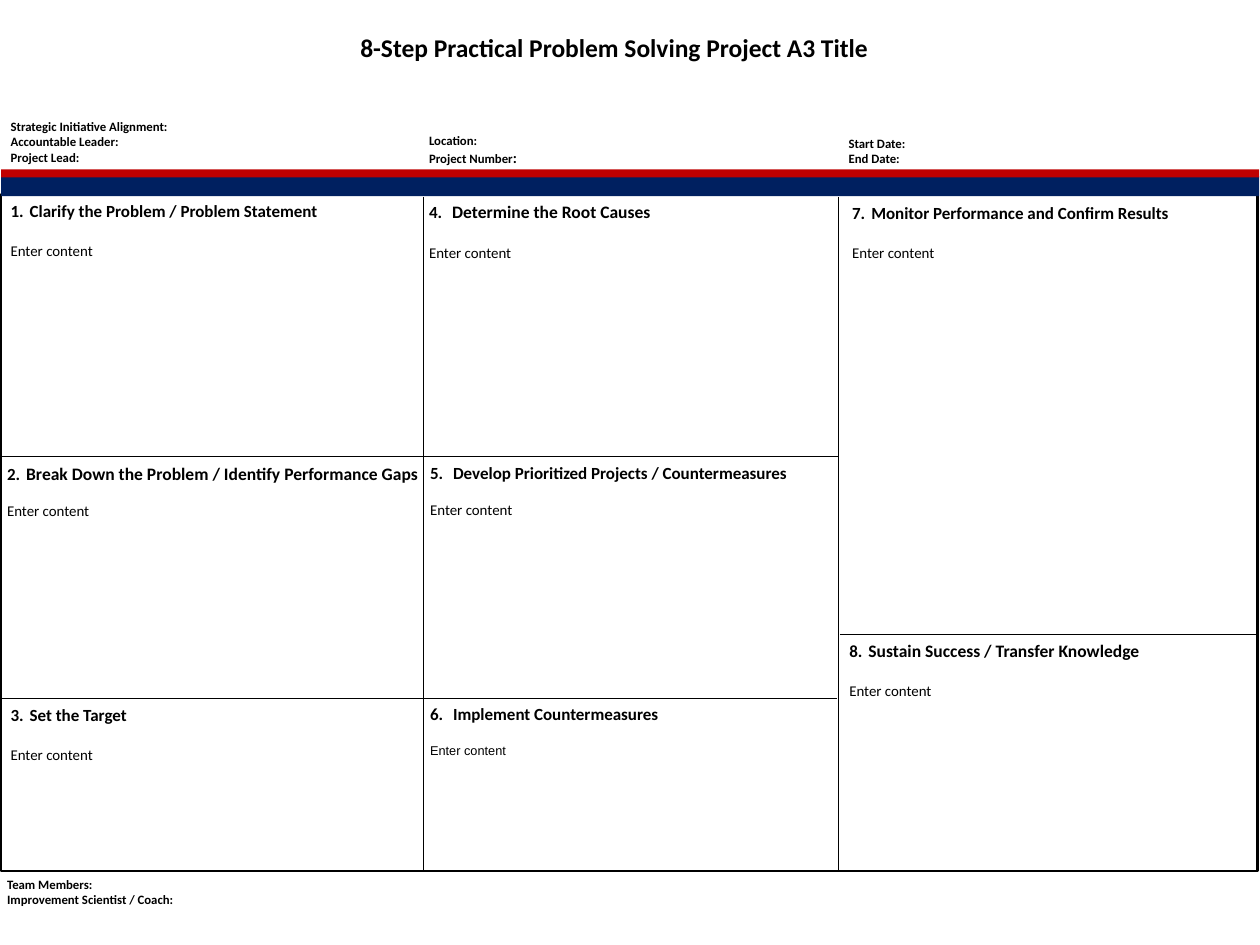
"""Build an eight-step A3 problem solving template."""
from dataclasses import dataclass
from typing import Any, Optional

from lxml.etree import SubElement
from pptx import Presentation
from pptx.dml.color import RGBColor
from pptx.enum.shapes import MSO_CONNECTOR, MSO_SHAPE
from pptx.enum.text import MSO_AUTO_SIZE, PP_ALIGN
from pptx.oxml.ns import qn
from pptx.util import Cm, Pt

BLACK, NAVY, RED = "000000", "002060", "C00000"
HEADING, BODY, LABEL = 13.6, 11.9, 10.2
HANGING = Cm(0.54)


@dataclass
class Span:
    """A stretch of text in one format."""
    text: str
    size: float
    bold: bool = True
    font: str = "Calibri"


@dataclass
class Area:
    """A rectangle in centimetres."""
    left: float
    top: float
    width: float
    height: float


@dataclass
class Step:
    """A numbered panel with its heading and content."""
    number: int
    title: str
    area: Area
    size: float = HEADING
    gap: float = 16.6
    content: Span = None
    automatic: bool = False


@dataclass
class Note:
    """A block of bold lines, each made of spans."""
    area: Area
    lines: list[list[Span]]
    align: Optional[PP_ALIGN] = None


@dataclass
class Rule:
    """A thin line between two points in centimetres."""
    start: tuple[float, float]
    end: tuple[float, float]


PLAIN = Span("Enter content", BODY, False)
ARIAL = Span("Enter content", 10.2, False, "Arial")

STEPS = [
    Step(1, "Clarify the Problem / Problem Statement", Area(0.05, 5.54, 11.79, 1.93)),
    Step(2, "Break Down the Problem / Identify Performance Gaps",
         Area(-0.05, 12.93, 12.19, 1.88), 14, 14.5),
    Step(3, "Set the Target", Area(0.05, 19.76, 11.79, 1.93)),
    Step(4, " Determine the Root Causes", Area(11.86, 5.56, 11.81, 1.93), 14),
    Step(5, " Develop Prioritized Projects / Countermeasures",
         Area(11.89, 12.93, 11.84, 1.85), gap=14.5),
    Step(6, " Implement Countermeasures", Area(11.89, 19.74, 11.79, 1.78),
         gap=14.5, content=ARIAL),
    Step(7, "Monitor Performance and Confirm Results",
         Area(23.8, 5.59, 11.79, 1.93), automatic=True),
    Step(8, "Sustain Success / Transfer Knowledge", Area(23.72, 17.93, 11.79, 1.93), 14),
]


def labels(*texts: str) -> list[list[Span]]:
    """Return one small bold line for each text."""
    return [[Span(text, LABEL)] for text in texts]


NOTES = [
    Note(Area(0.05, 3.23, 11.79, 1.55),
         labels("Strategic Initiative Alignment:", "Accountable Leader:", "Project Lead:")),
    Note(Area(11.86, 3.63, 11.79, 1.19),
         labels("Location:") + [[Span("Project Number", LABEL), Span(":", BODY)]]),
    Note(Area(23.7, 3.71, 4.01, 1.12), labels("Start Date:", "End Date:")),
    Note(Area(6.63, 0.79, 21.41, 1.12),
         [[Span("8-Step Practical Problem Solving Project A3 Title", 20.4)]], PP_ALIGN.CENTER),
    Note(Area(-0.05, 24.61, 11.79, 1.12),
         labels("Team Members:", "Improvement Scientist / Coach:")),
]

TOP, BOTTOM = 5.56, 24.59
RULES = [Rule((x, TOP), (x, BOTTOM)) for x in (11.94, 23.67)] + [
    Rule((left, y), (left + 11.81, y)) for left, y in
    ((0.03, 12.88), (0.03, 19.71), (11.86, 12.88), (11.81, 19.71), (23.7, 17.91))
]


def colour(value: str) -> RGBColor:
    """Turn a hex string into a colour."""
    return RGBColor.from_string(value)


def lengths(area: Area) -> list[Cm]:
    """Return the area's position and size as lengths."""
    return [Cm(value) for value in (area.left, area.top, area.width, area.height)]


def apply(target: Any, values: dict[str, Any]) -> None:
    """Set every named attribute of the target."""
    for name, value in values.items():
        setattr(target, name, value)


def draw_rectangle(page: Any, area: Area, fill: Optional[str] = None) -> None:
    """Draw a filled bar, or an outlined frame when there is no fill."""
    box = page.shapes.add_shape(MSO_SHAPE.RECTANGLE, *lengths(area))
    box.shadow.inherit = False
    if fill:
        box.fill.solid()
        box.fill.fore_color.rgb = colour(fill)
        box.line.fill.background()
    else:
        box.fill.background()
        box.line.color.rgb = colour(BLACK)
        box.line.width = Pt(2)


def draw_rule(page: Any, rule: Rule) -> None:
    """Draw a thin black line."""
    points = [Cm(value) for value in rule.start + rule.end]
    line = page.shapes.add_connector(MSO_CONNECTOR.STRAIGHT, *points)
    line.line.color.rgb = colour(BLACK)
    line.line.width = Pt(0.75)
    SubElement(line._element.spPr, qn("a:effectLst"))


def add_frame(page: Any, area: Area) -> Any:
    """Add a wrapping text box and return its text frame."""
    frame = page.shapes.add_textbox(*lengths(area)).text_frame
    apply(frame, {"word_wrap": True, "auto_size": MSO_AUTO_SIZE.SHAPE_TO_FIT_TEXT})
    return frame


def write(para: Any, spans: list[Span]) -> None:
    """Add formatted spans to a paragraph."""
    for span in spans:
        run = para.add_run()
        run.text = span.text
        apply(run.font, {"size": Pt(span.size), "bold": span.bold, "name": span.font})
        run.font.color.rgb = colour(BLACK)


def hang(para: Any) -> Any:
    """Give a paragraph a hanging indent and return its properties."""
    properties = para._p.get_or_add_pPr()
    properties.set("marL", str(HANGING))
    properties.set("indent", str(-HANGING))
    return properties


def draw_step(page: Any, step: Step) -> None:
    """Write a numbered heading and the content below it."""
    frame = add_frame(page, step.area)
    heading, content = frame.paragraphs[0], frame.add_paragraph()
    properties = hang(heading)
    title = Span(step.title, step.size)
    if step.automatic:
        SubElement(properties, qn("a:buFont"), typeface="+mj-lt")
        SubElement(properties, qn("a:buAutoNum"), type="arabicPeriod", startAt=str(step.number))
        write(heading, [title])
    else:
        write(heading, [Span(f"{step.number}.\t", HEADING), title])
    hang(content)
    content.space_before = Pt(step.gap)
    write(content, [step.content or PLAIN])


def draw_note(page: Any, note: Note) -> None:
    """Write a block of lines."""
    frame = add_frame(page, note.area)
    for index, spans in enumerate(note.lines):
        para = frame.add_paragraph() if index else frame.paragraphs[0]
        para.alignment = note.align
        write(para, spans)


def main() -> None:
    """Build and save the deck."""
    deck = Presentation()
    apply(deck, {"slide_width": Cm(35.56), "slide_height": Cm(26.67)})
    page = deck.slides.add_slide(deck.slide_layouts[6])
    draw_rectangle(page, Area(0.03, 5.49, 35.46, 19.1))
    for rule in RULES:
        draw_rule(page, rule)
    draw_rectangle(page, Area(0.03, 4.98, 35.51, 0.56), NAVY)
    draw_rectangle(page, Area(0.03, 4.78, 35.51, 0.23), RED)
    for step in STEPS:
        draw_step(page, step)
    for note in NOTES:
        draw_note(page, note)
    deck.save("out.pptx")


if __name__ == "__main__":
    main()
